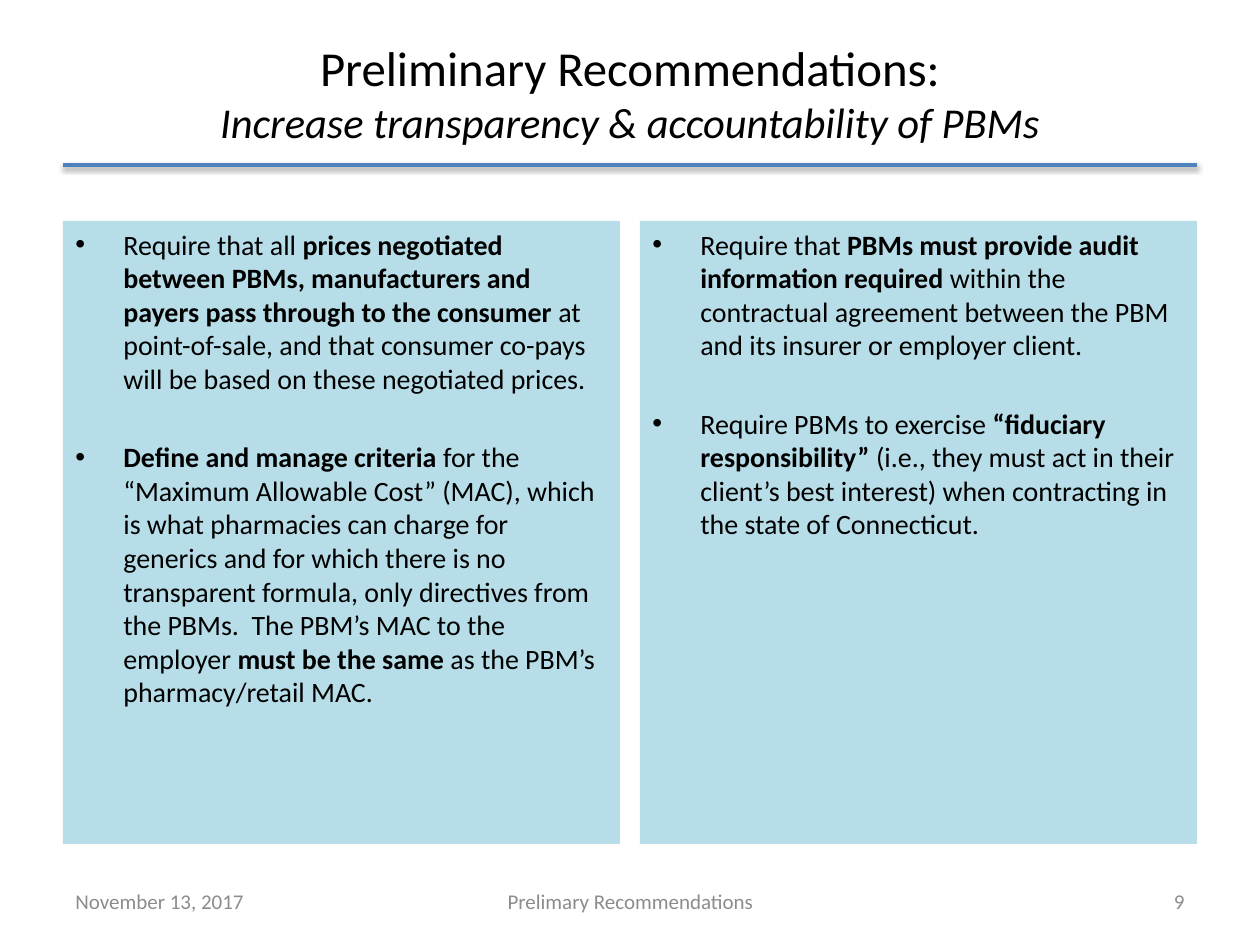
from lxml.etree import SubElement
from pptx import Presentation
from pptx.dml.color import RGBColor
from pptx.enum.shapes import MSO_CONNECTOR, MSO_SHAPE
from pptx.enum.text import MSO_ANCHOR, PP_ALIGN
from pptx.oxml.ns import qn
from pptx.util import Emu, Pt

EMU_PER_PX = 914400 / 126
PAGE_WIDTH, PAGE_HEIGHT = 1260, 945
MARGIN = 63
CONTENT_WIDTH = PAGE_WIDTH - 2 * MARGIN
COLUMN_WIDTH = 557
FONT = "Calibri"

# Each column is a list of bullets; each bullet is a list of (text, bold) spans.
COLUMNS = [
    [
        [("Require that all ", False),
         ("prices negotiated between PBMs, manufacturers and payers "
          "pass through to the consumer ", True),
         ("at point-of-sale, and that consumer co-pays will be based on "
          "these negotiated prices.", False)],
        [("Define and manage criteria ", True),
         ("for the “Maximum Allowable Cost” (MAC), which is what pharmacies "
          "can charge for generics and for which there is no transparent "
          "formula, only directives from the PBMs.  The PBM’s MAC to the "
          "employer ", False),
         ("must be the same ", True),
         ("as the PBM’s pharmacy/retail MAC.", False)],
    ],
    [
        [("Require that ", False),
         ("PBMs must provide audit information required ", True),
         ("within the contractual agreement between the PBM and its insurer "
          "or employer client.", False)],
        [("Require PBMs to exercise ", False),
         ("“fiduciary responsibility” ", True),
         ("(i.e., they must act in their client’s best interest) when "
          "contracting in the state of Connecticut.", False)],
    ],
]
# Left, width, text and alignment of each footer part.
FOOTERS = [
    (63, 294, "November 13, 2017", PP_ALIGN.LEFT),
    (431, 399, "Prelimary Recommendations", PP_ALIGN.CENTER),
    (903, 294, "9", PP_ALIGN.RIGHT),
]


def px(length):
    return Emu(round(length * EMU_PER_PX))


def color(value):
    return RGBColor.from_string(value)


def style(span, size, fill="000000", bold=False, italic=False):
    span.font.name = FONT
    span.font.size = Pt(size)
    span.font.color.rgb = color(fill)
    span.font.bold = bold
    span.font.italic = italic


def add_text_box(page, left, top, width, height, text, alignment):
    """Add a vertically centred one-paragraph box and return its paragraph."""
    box = page.shapes.add_textbox(px(left), px(top), px(width), px(height))
    frame = box.text_frame
    frame.word_wrap = True
    frame.vertical_anchor = MSO_ANCHOR.MIDDLE
    frame.text = text
    para = frame.paragraphs[0]
    para.alignment = alignment
    return para


def add_title(page, left, top, width, height):
    para = add_text_box(
        page, left, top, width, height,
        "Preliminary Recommendations:\vIncrease transparency & accountability of PBMs",
        PP_ALIGN.CENTER)
    heading, subheading = para.runs
    style(heading, 27.9)
    style(subheading, 24.3, italic=True)


def add_rule(page, left, top, width):
    """Draw the title underline with its soft shadow."""
    rule = page.shapes.add_connector(
        MSO_CONNECTOR.STRAIGHT, px(left), px(top), px(left + width), px(top))
    rule.line.color.rgb = color("4F81BD")
    rule.line.width = Pt(2)
    effects = SubElement(rule._element.spPr, qn("a:effectLst"))
    shadow = SubElement(effects, qn("a:outerShdw"), blurRad=str(Pt(3.1)),
                        dist=str(Pt(1.6)), dir="5400000", rotWithShape="0")
    tint = SubElement(shadow, qn("a:srgbClr"), val="000000")
    SubElement(tint, qn("a:alpha"), val="38000")


def add_bullet(para, spans):
    properties = para._p.get_or_add_pPr()
    properties.set("marL", str(px(48)))
    properties.set("indent", str(px(-48)))
    SubElement(properties, qn("a:buFont"), typeface="Arial")
    SubElement(properties, qn("a:buChar"), char="•")
    para.alignment = PP_ALIGN.LEFT
    for text, bold in spans:
        span = para.add_run()
        span.text = text
        style(span, 16, bold=bold)


def add_column(page, left, top, width, height, bullets):
    box = page.shapes.add_shape(
        MSO_SHAPE.RECTANGLE, px(left), px(top), px(width), px(height))
    box.shadow.inherit = False
    box.fill.solid()
    box.fill.fore_color.rgb = color("B7DEE8")
    box.line.fill.background()
    frame = box.text_frame
    frame.word_wrap = True
    frame.vertical_anchor = MSO_ANCHOR.TOP
    for index, spans in enumerate(bullets):
        para = frame.add_paragraph() if index else frame.paragraphs[0]
        para.space_before = Pt(25.5 if index else 0)
        add_bullet(para, spans)


def add_footer(page, top, height):
    for left, width, text, alignment in FOOTERS:
        para = add_text_box(page, left, top, width, height, text, alignment)
        style(para.runs[0], 12, "8C8C8C")


def main():
    deck = Presentation()
    deck.slide_width, deck.slide_height = px(PAGE_WIDTH), px(PAGE_HEIGHT)
    page = deck.slides.add_slide(deck.slide_layouts[6])
    add_rule(page, MARGIN, 165, CONTENT_WIDTH)
    add_title(page, MARGIN, 37, CONTENT_WIDTH, 110)
    column_step = CONTENT_WIDTH - COLUMN_WIDTH
    for index, bullets in enumerate(COLUMNS):
        add_column(page, MARGIN + index * column_step, 221, COLUMN_WIDTH, 623, bullets)
    add_footer(page, 876, 50)
    deck.save("out.pptx")


if __name__ == "__main__":
    main()
